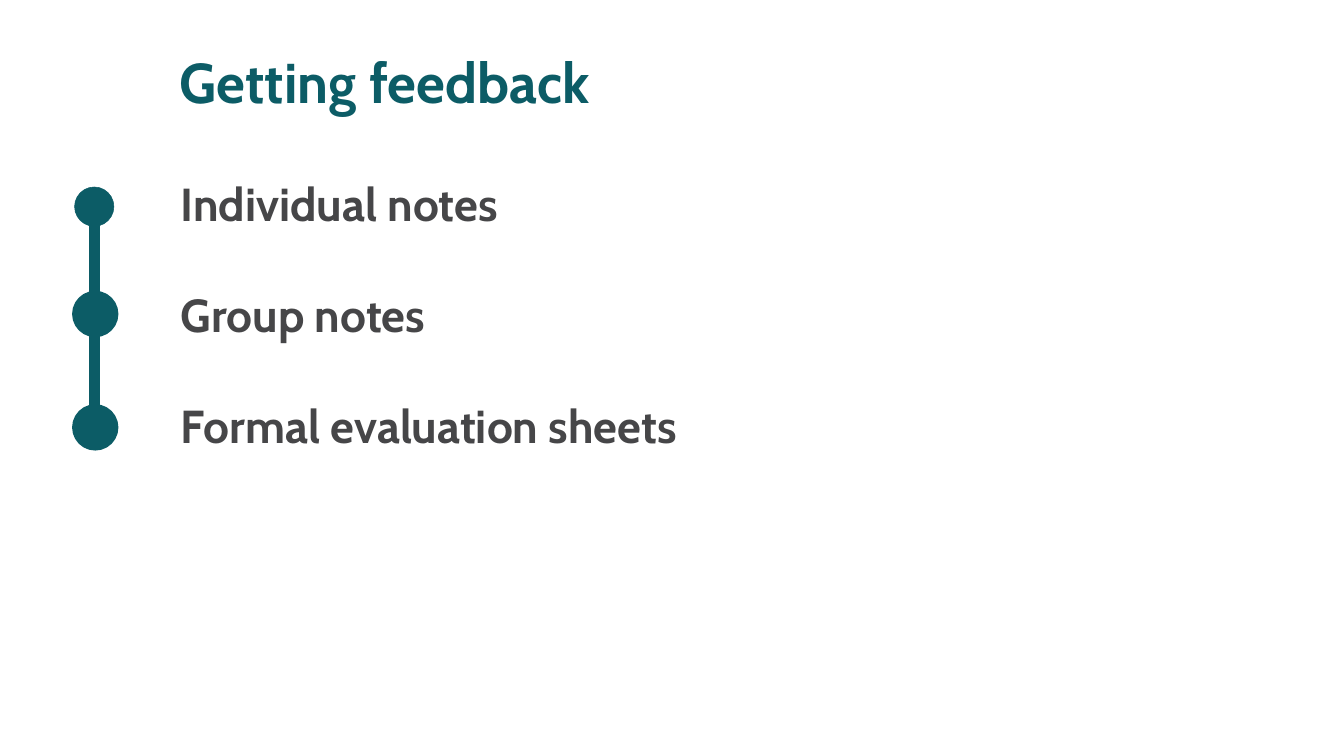
from pptx import Presentation
from pptx.dml.color import RGBColor
from pptx.enum.shapes import MSO_SHAPE
from pptx.util import Inches, Pt

TEAL = RGBColor(0x0C, 0x5C, 0x66)
GRAY = RGBColor(0x46, 0x46, 0x48)
FONT = "Cabin"
TOPICS = ["Individual notes", "Group notes", "Formal evaluation sheets"]


def add_text(slide, left, top, width, height, lines, size, color,
             top_inset=0.05, gap=0):
    """Add bold lines of text, with a gap in points between them."""
    box = slide.shapes.add_textbox(
        Inches(left), Inches(top), Inches(width), Inches(height))
    frame = box.text_frame
    frame.word_wrap = True
    frame.margin_top = Inches(top_inset)
    frame.text = "\n".join(lines)
    for index, paragraph in enumerate(frame.paragraphs):
        if index:
            paragraph.space_before = Pt(gap)
        paragraph.font.name = FONT
        paragraph.font.size = Pt(size)
        paragraph.font.bold = True
        paragraph.font.color.rgb = color


def add_solid(slide, kind, left, top, width, height, line_width=0.75):
    shape = slide.shapes.add_shape(
        kind, Inches(left), Inches(top), Inches(width), Inches(height))
    shape.shadow.inherit = False
    shape.fill.solid()
    shape.fill.fore_color.rgb = TEAL
    shape.line.color.rgb = TEAL
    shape.line.width = Pt(line_width)


def add_timeline(slide):
    add_solid(slide, MSO_SHAPE.RECTANGLE, 1.78, 3.86, 0.2, 4.81)
    dots = [(1.48, 3.71, 0.75), (1.5, 5.84, 10), (1.5, 8.09, 10)]
    for left, top, line_width in dots:
        add_solid(slide, MSO_SHAPE.OVAL, left, top, 0.78, 0.78, line_width)


def main():
    presentation = Presentation()
    presentation.slide_width = Inches(26.67)
    presentation.slide_height = Inches(15)
    slide = presentation.slides.add_slide(presentation.slide_layouts[6])
    add_text(slide, 3.47, 0.9, 21.34, 1.45, ["Getting feedback"], 80, TEAL)
    add_timeline(slide)
    add_text(slide, 3.49, 2.33, 22.48, 8.99, TOPICS, 66, GRAY,
             top_inset=1.15, gap=79)
    presentation.save("out.pptx")


if __name__ == "__main__":
    main()
